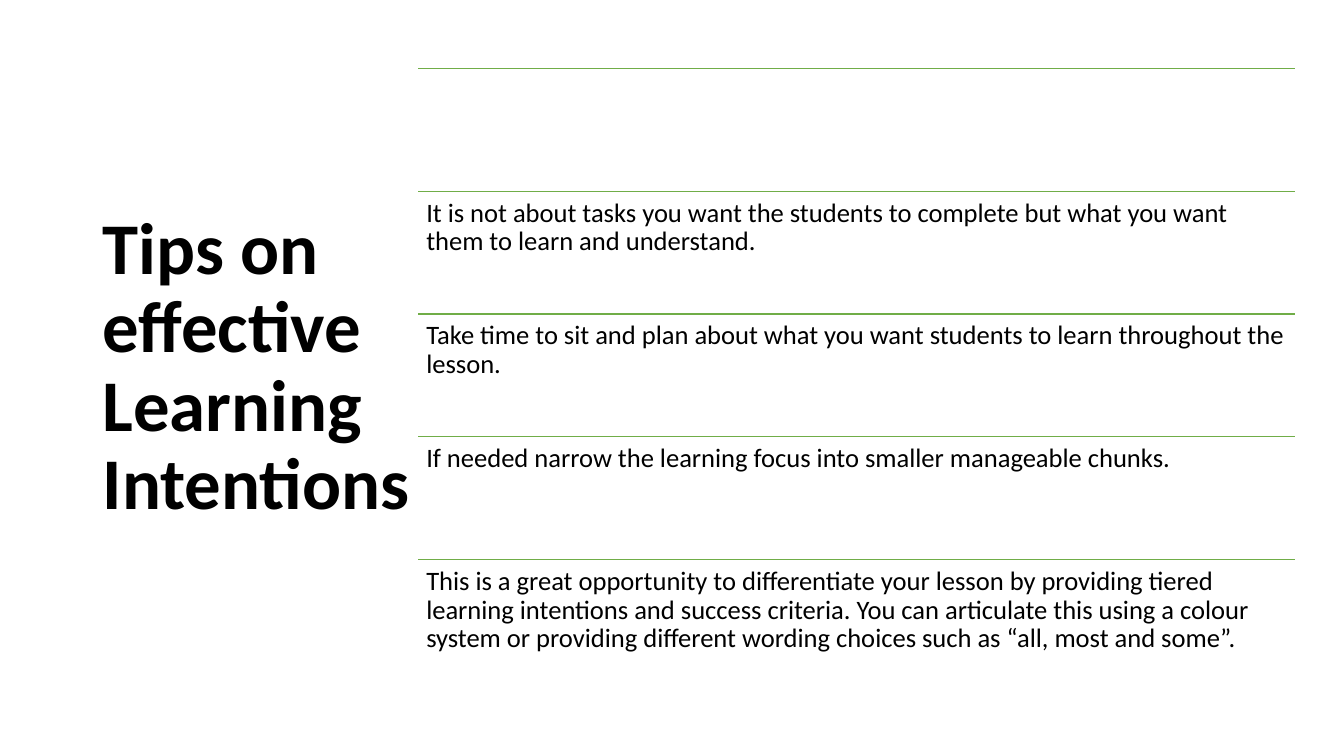
from lxml import etree
from pptx import Presentation
from pptx.dml.color import RGBColor
from pptx.enum.shapes import MSO_CONNECTOR
from pptx.enum.text import MSO_ANCHOR
from pptx.oxml.ns import qn
from pptx.util import Pt

STRAIGHT = MSO_CONNECTOR.STRAIGHT
TOP, MIDDLE = MSO_ANCHOR.TOP, MSO_ANCHOR.MIDDLE

TITLE = "Tips on effective Learning Intentions"
TIPS = [
    "",  # the first row has a rule but no wording
    "It is not about tasks you want the students to complete but what you "
    "want them to learn and understand.",
    "Take time to sit and plan about what you want students to learn "
    "throughout the lesson.",
    "If needed narrow the learning focus into smaller manageable chunks.",
    "This is a great opportunity to differentiate your lesson by providing "
    "tiered learning intentions and success criteria. You can articulate "
    "this using a colour system or providing different wording choices such "
    "as “all, most and some”.",
]
LIST_LEFT, LIST_TOP, LIST_WIDTH, ROW_HEIGHT = 298.8, 49, 626.4, 87.66


def rgb(hex_code):
    return RGBColor.from_string(hex_code)


def write(tf, text, size, color, font, bold=False, line_spacing=0.9):
    p = tf.paragraphs[0]
    p.line_spacing = line_spacing
    r = p.add_run()
    r.text = text
    r.font.name = font
    r.font.size = Pt(size)
    r.font.bold = bold
    r.font.color.rgb = rgb(color)


class SlideBuilder:
    font = "Calibri"
    ink = "000000"
    green = "70AD47"

    def __init__(self, slide):
        self.s = slide

    def text(self, text, left, top, width, height, size, bold=False,
             anchor=TOP, insets=(7.2, 3.6)):
        """Add a text box; insets are (horizontal, vertical)."""
        box = self.s.shapes.add_textbox(Pt(left), Pt(top), Pt(width), Pt(height))
        tf = box.text_frame
        tf.word_wrap = True
        tf.vertical_anchor = anchor
        tf.margin_left = tf.margin_right = Pt(insets[0])
        tf.margin_top = tf.margin_bottom = Pt(insets[1])
        write(tf, text, size, self.ink, self.font, bold=bold)

    def rule(self, left, top, width):
        """Add a horizontal divider."""
        line = self.s.shapes.add_connector(
            STRAIGHT, Pt(left), Pt(top), Pt(left + width), Pt(top))
        line.line.color.rgb = rgb(self.green)
        line.line.width = Pt(1)
        etree.SubElement(line._element.spPr, qn("a:effectLst"))


def main():
    prs = Presentation()
    prs.slide_width, prs.slide_height = Pt(960), Pt(540)
    s = SlideBuilder(prs.slides.add_slide(prs.slide_layouts[6]))

    s.text(TITLE, 66.24, 43.92, 265.68, 438.48, 52, bold=True, anchor=MIDDLE)
    for i, tip in enumerate(TIPS):
        top = LIST_TOP + i * ROW_HEIGHT
        s.rule(LIST_LEFT, top, LIST_WIDTH)
        if tip:
            s.text(tip, LIST_LEFT, top, LIST_WIDTH, ROW_HEIGHT, 19,
                   insets=(5.7, 5.7))

    prs.save("out.pptx")


if __name__ == "__main__":
    main()
